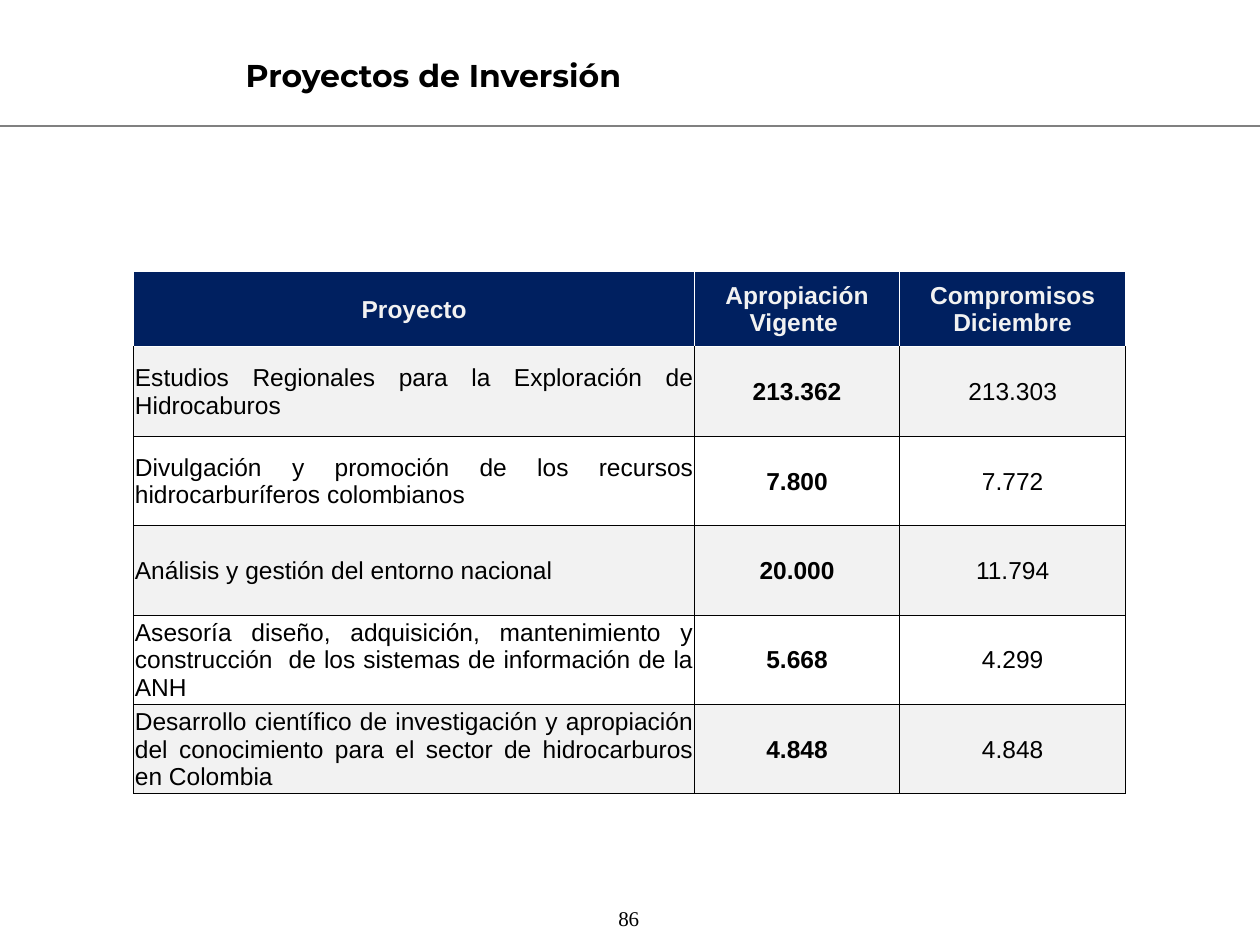
from lxml.etree import SubElement
from pptx import Presentation
from pptx.dml.color import RGBColor
from pptx.enum.shapes import MSO_CONNECTOR
from pptx.enum.text import MSO_ANCHOR, MSO_AUTO_SIZE, PP_ALIGN
from pptx.oxml.ns import qn
from pptx.util import Pt

NAVY, LIGHT, WHITE, BLACK, GRAY = "002060", "F2F2F2", "FFFFFF", "000000", "808080"

HEADER = ["Proyecto", "Apropiación Vigente ", "Compromisos Diciembre"]
PROJECTS = [
    ["Estudios Regionales para la Exploración de Hidrocaburos", "213.362", "213.303"],
    ["Divulgación y promoción de los recursos hidrocarburíferos colombianos ", "7.800", "7.772"],
    ["Análisis y gestión del entorno nacional", "20.000", "11.794"],
    ["Asesoría diseño, adquisición, mantenimiento y construcción  de los sistemas "
     "de información de la ANH", "5.668", "4.299"],
    ["Desarrollo científico de investigación y apropiación del conocimiento para el sector "
     "de hidrocarburos en Colombia ", "4.848", "4.848"],
]
COLUMN_WIDTHS = [320.6, 117, 129.4]
HEADER_HEIGHT, ROW_HEIGHT = 43.2, 51.1


def write(text_frame, text, font_name, size, color, bold=False, alignment=PP_ALIGN.CENTER):
    """Put one formatted run in the first paragraph of the frame."""
    paragraph = text_frame.paragraphs[0]
    paragraph.alignment = alignment
    run = paragraph.add_run()
    run.text = text
    run.font.name = font_name
    run.font.size = Pt(size)
    run.font.bold = bold
    run.font.color.rgb = RGBColor.from_string(color)


def set_borders(cell, colors):
    """Draw half-point borders; colors are left, right, top, bottom."""
    properties = cell._tc.get_or_add_tcPr()
    for position, (side, color) in enumerate(zip(("lnL", "lnR", "lnT", "lnB"), colors)):
        line = SubElement(properties, qn(f"a:{side}"), w=str(Pt(0.5)))
        SubElement(SubElement(line, qn("a:solidFill")), qn("a:srgbClr"), val=color)
        properties.insert(position, line)


presentation = Presentation()
presentation.slide_width, presentation.slide_height = Pt(720), Pt(540)
slide = presentation.slides.add_slide(presentation.slide_layouts[5])

# Title and rule below it
title = slide.shapes.title
title.left, title.top, title.width, title.height = Pt(133.2), Pt(28.1), Pt(396.7), Pt(29)
title.text_frame.word_wrap = True
title.text_frame.auto_size = MSO_AUTO_SIZE.NONE
title.text_frame.vertical_anchor = MSO_ANCHOR.MIDDLE
write(title.text_frame, "Proyectos de Inversión", "Montserrat", 18, BLACK, True, PP_ALIGN.LEFT)

rule = slide.shapes.add_connector(MSO_CONNECTOR.STRAIGHT, Pt(0), Pt(72), Pt(720), Pt(72))
rule.line.color.rgb = RGBColor.from_string(GRAY)
rule.line.width = Pt(0.75)
SubElement(rule._element.spPr, qn("a:effectLst"))

# Project table
rows = [HEADER] + PROJECTS
table = slide.shapes.add_table(
    len(rows), len(HEADER), Pt(76.4), Pt(155), Pt(sum(COLUMN_WIDTHS)),
    Pt(HEADER_HEIGHT + ROW_HEIGHT * len(PROJECTS))).table
table.first_row = table.horz_banding = False
for column, width in zip(table.columns, COLUMN_WIDTHS):
    column.width = Pt(width)

for row_index, texts in enumerate(rows):
    is_header = row_index == 0
    table.rows[row_index].height = Pt(HEADER_HEIGHT if is_header else ROW_HEIGHT)
    fill_color = NAVY if is_header else LIGHT if row_index % 2 else WHITE
    side_color = WHITE if is_header else BLACK
    top_color = WHITE if row_index <= 1 else BLACK
    for column_index, text in enumerate(texts):
        cell = table.cell(row_index, column_index)
        cell.margin_left = cell.margin_right = cell.margin_top = Pt(0.7)
        cell.margin_bottom = Pt(0)
        cell.vertical_anchor = MSO_ANCHOR.MIDDLE
        cell.fill.solid()
        cell.fill.fore_color.rgb = RGBColor.from_string(fill_color)
        set_borders(cell, [side_color, side_color, top_color, side_color])
        is_project_name = column_index == 0 and not is_header
        write(cell.text_frame, text, "Arial", 14, LIGHT if is_header else BLACK,
              is_header or column_index == 1,
              PP_ALIGN.JUSTIFY if is_project_name else PP_ALIGN.CENTER)

# Page number
page_number = slide.shapes.add_textbox(Pt(340.6), Pt(509), Pt(37.4), Pt(31.7)).text_frame
page_number.word_wrap = True
page_number.vertical_anchor = MSO_ANCHOR.MIDDLE
write(page_number, "86", "Times New Roman", 12, BLACK)

presentation.save("out.pptx")
